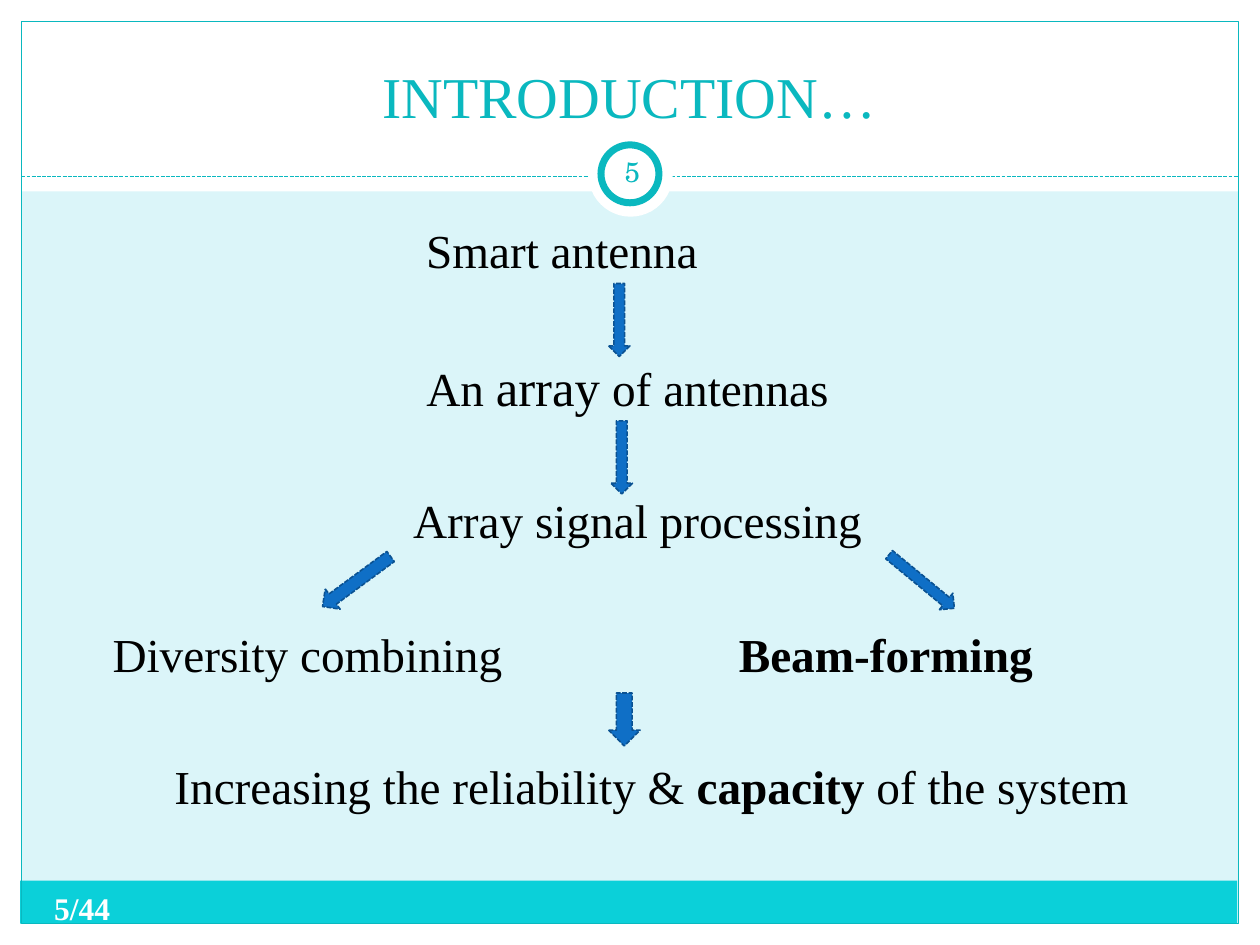
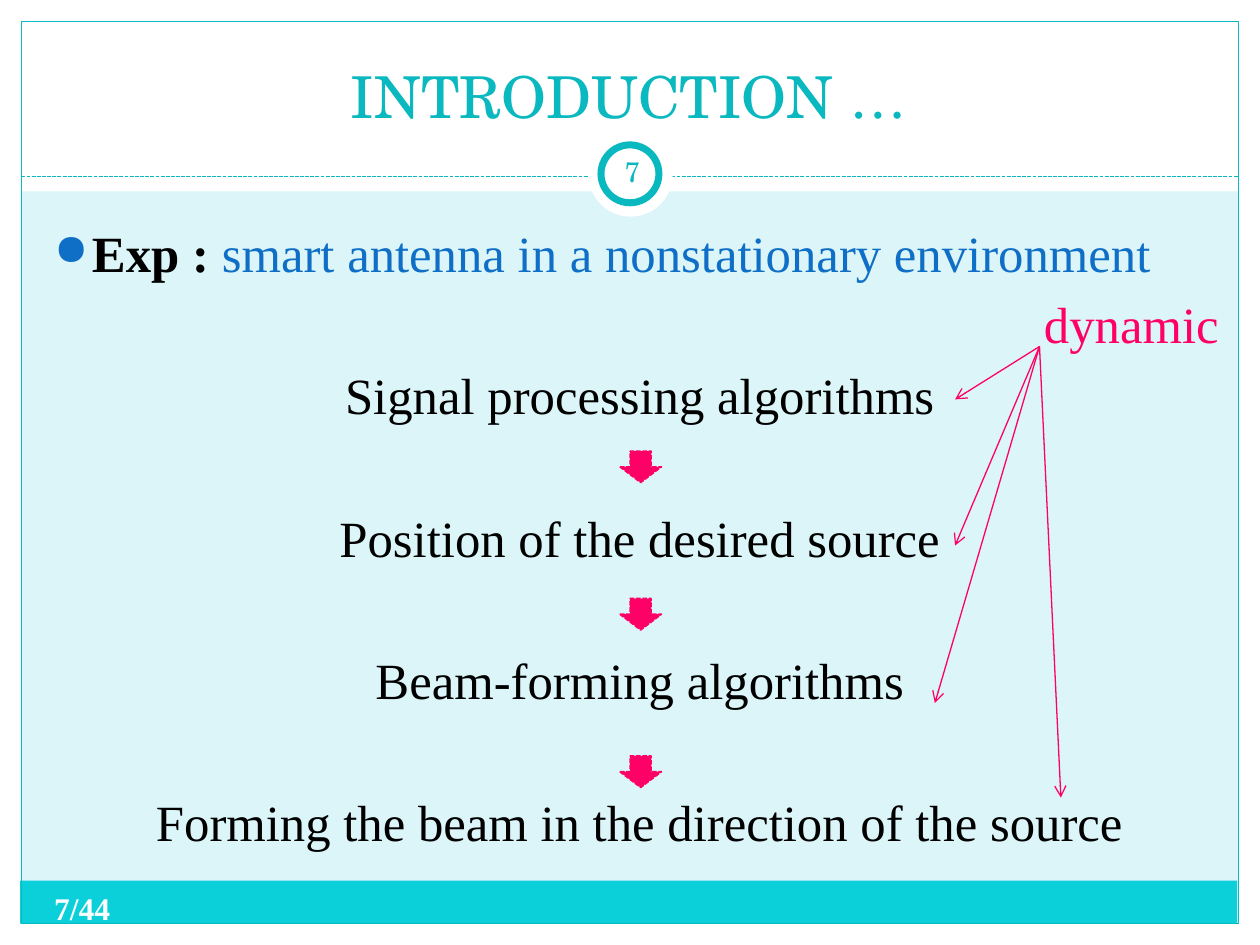
import pptx
import pptx.util
import pptx.dml.color
import pptx.enum.dml
import pptx.enum.shapes
import pptx.enum.text
import pptx.oxml
import pptx.oxml.ns
import lxml.etree as etree

Inches, Pt = pptx.util.Inches, pptx.util.Pt
SHAPE = pptx.enum.shapes.MSO_SHAPE
ALIGN = pptx.enum.text.PP_ALIGN
ANCHOR = pptx.enum.text.MSO_ANCHOR
DASH = pptx.enum.dml.MSO_LINE.SQUARE_DOT
qn = pptx.oxml.ns.qn

SERIF, SCHOOL = "Times New Roman", "TeX Gyre Schola"
WHITE, BLACK, PALE = "FFFFFF", "000000", "DBF5F9"
TEAL, AQUA, BLUE, NAVY, PINK = "0AB8BF", "0BD0D9", "0F6FC6", "0B5292", "FF0066"
TOTAL = 44


def color(code):
    return pptx.dml.color.RGBColor.from_string(code)


class Deck:
    def __init__(self):
        self.prs = pptx.Presentation()
        self.prs.slide_width, self.prs.slide_height = Inches(10), Inches(7.5)
        back = self.prs.slide_master.background.fill
        back.solid()
        back.fore_color.rgb = color(PALE)
        self.slide = None

    def start(self, title, num, font):
        """Add a slide with its bands, badge, title and page count."""
        self.slide = self.prs.slides.add_slide(self.prs.slide_layouts[5])
        # White margins, bottom band and frame
        self.shape(SHAPE.RECTANGLE, 0, 7.33, 10, 0.17, WHITE)
        self.shape(SHAPE.RECTANGLE, 0, 0, 10, 1.52, WHITE)
        for left in (0, 9.83):
            self.shape(SHAPE.RECTANGLE, left, 0, 0.17, 7.5, WHITE)
        self.shape(SHAPE.RECTANGLE, 0.16, 6.99, 9.66, 0.34, AQUA)
        self.shape(SHAPE.RECTANGLE, 0.17, 0.17, 9.66, 7.16, None, TEAL, 0.75)
        # Dashed rule with the number badge
        self.line((0.17, 1.4), (9.83, 1.4), TEAL).line.dash_style = DASH
        self.shape(SHAPE.OVAL, 4.67, 1.05, 0.67, 0.67, WHITE)
        self.shape(SHAPE.OVAL, 4.77, 1.15, 0.46, 0.46, WHITE, TEAL, 4)
        self.title(title, font)
        self.text(4.77, 1.12, 0.5, 0.48, [(str(num), {"tint": TEAL, "font": SCHOOL})],
                  16, ALIGN.CENTER, ANCHOR.MIDDLE)
        self.text(0.43, 7.06, 3.72, 0.3,
                  [(f"{num}/{TOTAL}", {"tint": WHITE, "bold": True})], 18)

    def title(self, words, font):
        head = self.slide.shapes.title
        head.left, head.top = Inches(0.33), Inches(0.25)
        head.width, head.height = Inches(9.33), Inches(0.83)
        frame = head.text_frame
        frame.text = words
        frame.auto_size = pptx.enum.text.MSO_AUTO_SIZE.NONE
        frame.vertical_anchor = ANCHOR.BOTTOM
        para = frame.paragraphs[0]
        para.alignment = ALIGN.CENTER
        self.style(para.runs[0], 33, tint=TEAL, font=font)
        # Bring the title in front of the bands
        head.element.getparent().append(head.element)

    def style(self, run, size, tint=BLACK, bold=False, font=SERIF):
        run.font.size, run.font.name, run.font.bold = Pt(size), font, bold
        run.font.color.rgb = color(tint)

    def shape(self, kind, left, top, wide, high, fill=None, edge=None, width=0.9):
        item = self.slide.shapes.add_shape(
            kind, Inches(left), Inches(top), Inches(wide), Inches(high))
        item.shadow.inherit = False
        if fill:
            item.fill.solid()
            item.fill.fore_color.rgb = color(fill)
        else:
            item.fill.background()
        if edge:
            item.line.color.rgb = color(edge)
            item.line.width = Pt(width)
        else:
            item.line.fill.background()
        return item

    def arrow(self, left, top, wide, high, fill=BLUE, edge=NAVY, turn=0):
        item = self.shape(SHAPE.DOWN_ARROW, left, top, wide, high, fill, edge)
        item.line.dash_style = DASH
        item.rotation = turn

    def line(self, start, end, tint, tip=False):
        ends = [Inches(n) for n in (*start, *end)]
        item = self.slide.shapes.add_connector(
            pptx.enum.shapes.MSO_CONNECTOR.STRAIGHT, *ends)
        item.line.color.rgb = color(tint)
        item.line.width = Pt(0.75)
        if tip:
            etree.SubElement(item.line._get_or_add_ln(), qn("a:tailEnd"), type="arrow")
        etree.SubElement(item.element.spPr, qn("a:effectLst"))
        return item

    def text(self, left, top, wide, high, parts, size,
             align=ALIGN.LEFT, anchor=ANCHOR.TOP):
        """Add one line of text; parts are (words, style) pairs."""
        box = self.slide.shapes.add_textbox(
            Inches(left), Inches(top), Inches(wide), Inches(high))
        frame = box.text_frame
        frame.word_wrap = True
        frame.vertical_anchor = anchor
        frame.margin_left = frame.margin_right = 0
        frame.margin_top = frame.margin_bottom = 0
        para = frame.paragraphs[0]
        para.alignment = align
        for words, look in parts:
            run = para.add_run()
            run.text = words
            self.style(run, **{"size": size, **look})
        return para

    def label(self, mid, top, wide, parts, size):
        """Add a line of text centred on mid."""
        self.text(mid - wide / 2, top, wide, 0.5, parts, size, ALIGN.CENTER)

    def bullet(self, left, top, wide, parts, size):
        props = self.text(left, top, wide, 0.5, parts, size)._p.get_or_add_pPr()
        props.set("marL", str(Inches(0.3)))
        props.set("indent", str(-Inches(0.3)))
        tint = etree.SubElement(props, qn("a:buClr"))
        etree.SubElement(tint, qn("a:srgbClr"), val=BLUE)
        etree.SubElement(props, qn("a:buSzPct"), val="85000")
        etree.SubElement(props, qn("a:buChar"), char="●")


def chain(deck):
    """From smart antenna to system capacity."""
    deck.start("INTRODUCTION…", 5, SERIF)
    bold = {"bold": True}
    labels = [
        (4.46, 1.76, 3, [("Smart antenna", {})]),
        (4.98, 2.82, 4, [("An ", {}), ("array", {"size": 29}), (" of antennas", {})]),
        (5.06, 3.9, 4.4, [("Array signal processing", {})]),
        (2.44, 4.96, 4, [("Diversity combining", {})]),
        (7.03, 4.96, 3, [("Beam-forming", bold)]),
        (5.17, 6.01, 8.6, [("Increasing the reliability & ", {}),
                           ("capacity", bold), (" of the system", {})]),
    ]
    for mid, top, wide, parts in labels:
        deck.label(mid, top, wide, parts, 27)
    # Arrows down the chain, then out to the two branches
    deck.arrow(4.83, 2.25, 0.17, 0.58)
    deck.arrow(4.85, 3.34, 0.17, 0.58)
    deck.arrow(2.73, 4.28, 0.2, 0.67, turn=53.7)
    deck.arrow(7.23, 4.28, 0.17, 0.67, turn=309.4)
    deck.arrow(4.83, 5.5, 0.25, 0.42)


def example(deck):
    """Steps that all change in a nonstationary environment."""
    deck.start("INTRODUCTION …", 7, SCHOOL)
    deck.bullet(0.43, 1.76, 9.3, [
        ("Exp : ", {"bold": True}),
        ("smart antenna in a nonstationary environment", {"tint": BLUE})], 29)
    deck.label(8.98, 2.32, 1.6, [("dynamic", {"tint": PINK})], 29)
    # Steps at an equal pitch
    steps = ["Signal processing algorithms", "Position of the desired source",
             "Beam-forming algorithms",
             "Forming the beam in the direction of the source"]
    for row, step in enumerate(steps):
        deck.label(5.08, 2.89 + 1.13 * row, 8.6, [(step, {})], 29)
    for top in (3.58, 4.75, 6):
        deck.arrow(4.92, top, 0.33, 0.25, PINK, PINK)
    # Pointers from "dynamic" to every step
    for end in ((7.58, 3.17), (7.58, 4.33), (7.42, 5.58), (8.42, 6.33)):
        deck.line((8.25, 2.75), end, PINK, tip=True)


def main():
    deck = Deck()
    chain(deck)
    example(deck)
    deck.prs.save("out.pptx")


if __name__ == "__main__":
    main()
